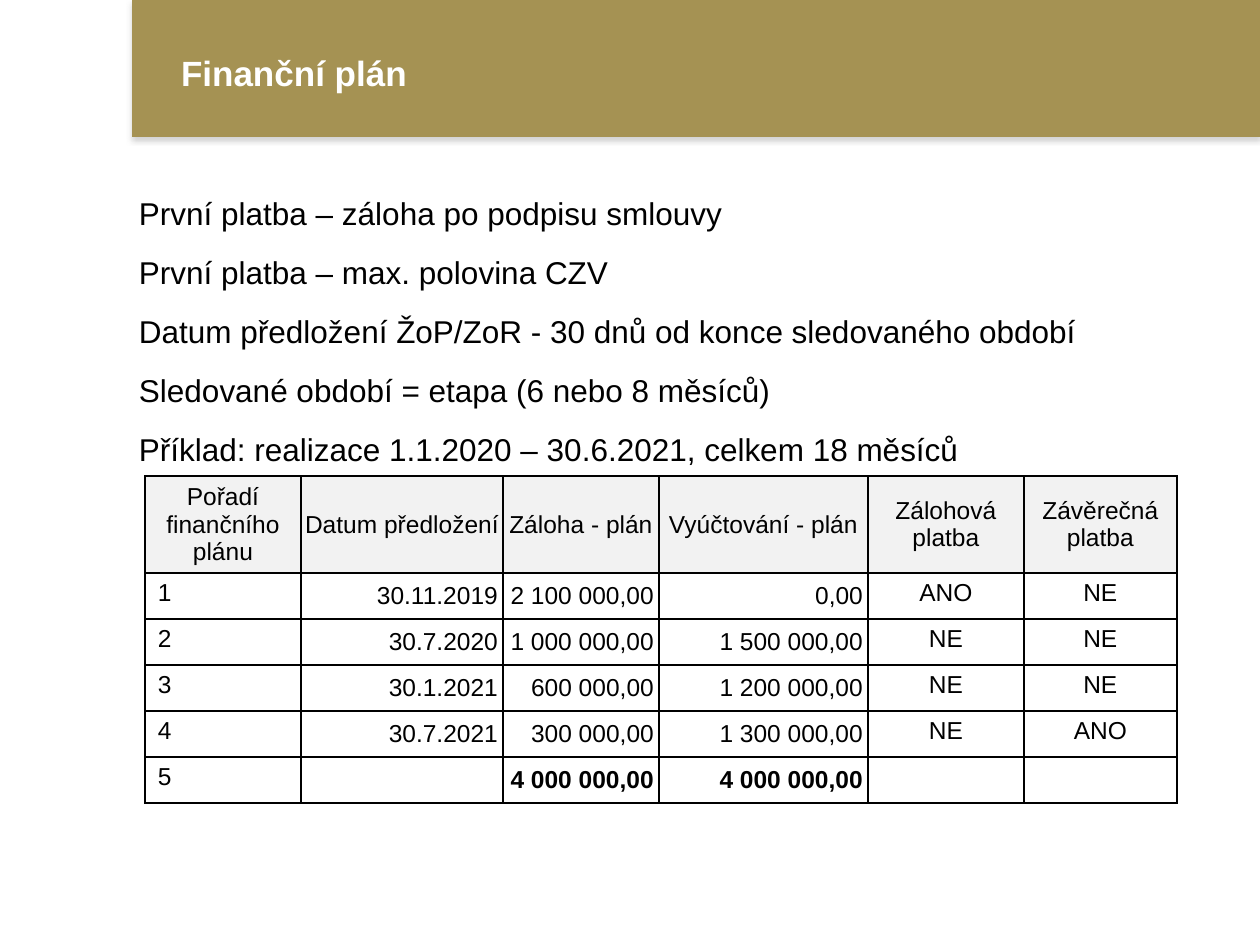
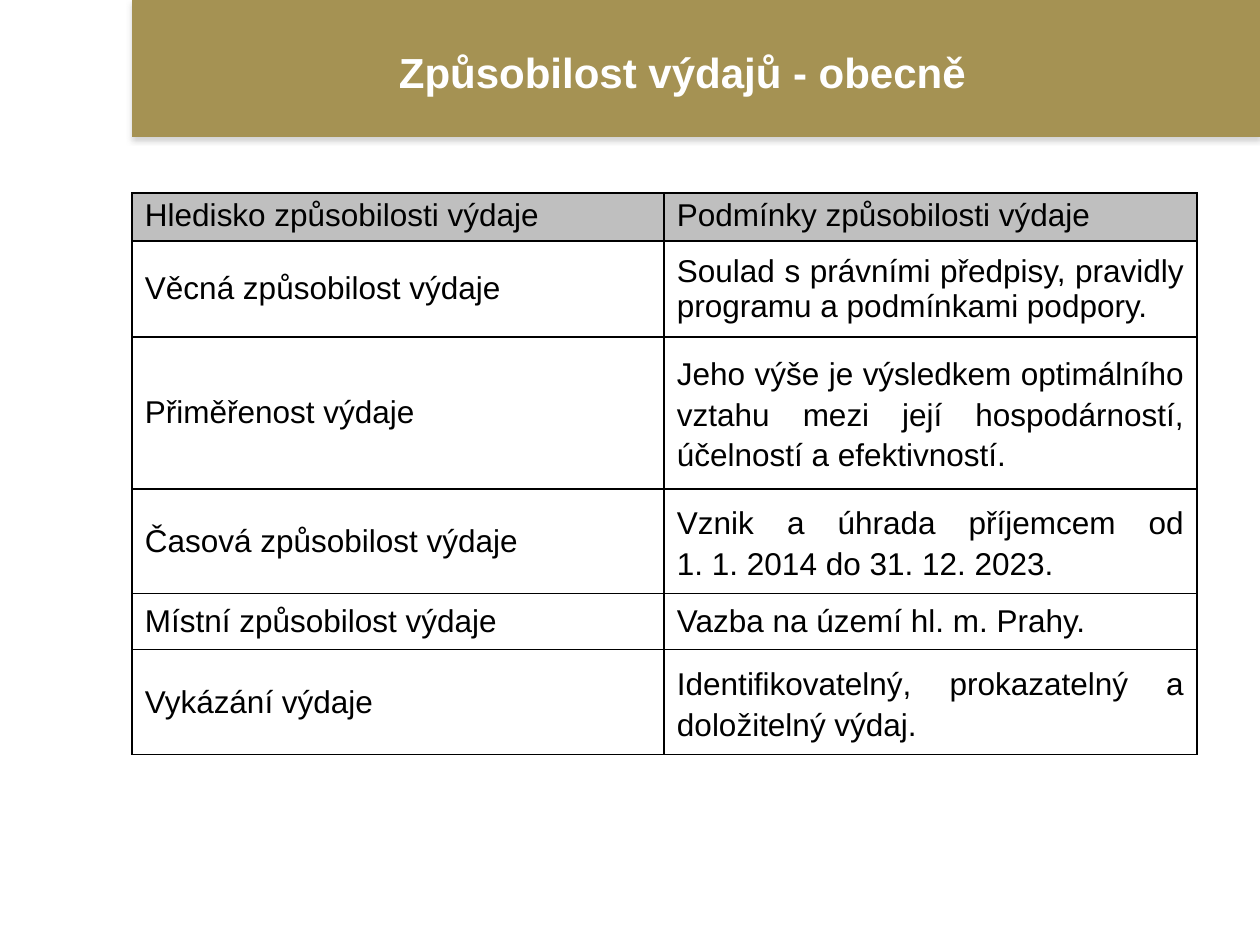
from lxml import etree
from pptx import Presentation
from pptx.dml.color import RGBColor
from pptx.enum.shapes import MSO_SHAPE
from pptx.enum.text import MSO_ANCHOR, PP_ALIGN
from pptx.oxml import parse_xml
from pptx.oxml.ns import nsdecls, qn
from pptx.util import Pt

RECTANGLE = MSO_SHAPE.RECTANGLE
TOP, MIDDLE = MSO_ANCHOR.TOP, MSO_ANCHOR.MIDDLE
LEFT, CENTER = PP_ALIGN.LEFT, PP_ALIGN.CENTER
RIGHT, JUSTIFY = PP_ALIGN.RIGHT, PP_ALIGN.JUSTIFY

EMU_PER_PX = 914400 / 126
FONT = "Arial"
COLORS = {
    "band": "A59253",
    "title": "FFFFFF",
    "text": "000000",
    "border": "000000",
    "shadow": "808080",
    "plan_header": "F2F2F2",
    "rules_header": "BFBFBF",
}

DEFAULT_MARGINS = (13, 6, 13, 6)
NO_MARGINS = (0, 0, 0, 0)
AMOUNT_MARGINS = (1, 1, 5, 0)

PAYMENT_NOTES = [
    "První platba – záloha po podpisu smlouvy",
    "První platba – max. polovina CZV",
    "Datum předložení ŽoP/ZoR - 30 dnů od konce sledovaného období",
    "Sledované období = etapa (6 nebo 8 měsíců)",
    "Příklad: realizace 1.1.2020 – 30.6.2021, celkem 18 měsíců",
]
PLAN_ROWS = [
    ["Pořadí finančního plánu", "Datum předložení", "Záloha - plán",
     "Vyúčtování - plán", "Zálohová platba", "Závěrečná platba"],
    ["1", "30.11.2019", "2 100 000,00", "0,00", "ANO", "NE"],
    ["2", "30.7.2020", "1 000 000,00", "1 500 000,00", "NE", "NE"],
    ["3", "30.1.2021", "600 000,00", "1 200 000,00", "NE", "NE"],
    ["4", "30.7.2021", "300 000,00", "1 300 000,00", "NE", "ANO"],
    ["5", "", "4 000 000,00", "4 000 000,00", "", ""],
]
RULES_ROWS = [
    ["Hledisko způsobilosti výdaje", "Podmínky způsobilosti výdaje"],
    ["Věcná způsobilost výdaje",
     "Soulad s právními předpisy, pravidly programu a podmínkami podpory."],
    ["Přiměřenost výdaje",
     "Jeho výše je výsledkem optimálního vztahu mezi její hospodárností, "
     "účelností a efektivností."],
    ["Časová způsobilost výdaje",
     "Vznik a úhrada příjemcem od\v1. 1. 2014 do 31. 12. 2023."],
    ["Místní způsobilost výdaje", "Vazba na území hl. m. Prahy."],
    ["Vykázání výdaje", "Identifikovatelný, prokazatelný a doložitelný výdaj."],
]
WIDE_SPACED_RULES = (2, 3, 5)
LOCAL_RULE = 4


def px(length):
    return round(length * EMU_PER_PX)


def write(text_frame, text, size=18, color="text", bold=False, align=LEFT,
          line_spacing=None, space_before=0, indent=0):
    lines = [text] if isinstance(text, str) else text
    for index, line in enumerate(lines):
        paragraph = text_frame.add_paragraph() if index else text_frame.paragraphs[0]
        paragraph.text = line
        paragraph.alignment = align
        if line_spacing:
            paragraph.line_spacing = line_spacing
        if index:
            paragraph.space_before = Pt(space_before)
        if indent:
            paragraph._p.get_or_add_pPr().set("marL", str(px(indent)))
        for run in paragraph.runs:
            run.font.name = FONT
            run.font.size = Pt(size)
            run.font.bold = bold
            run.font.color.rgb = RGBColor.from_string(COLORS[color])


def add_text(slide, box, text, anchor=TOP, margins=DEFAULT_MARGINS, **text_format):
    shape = slide.shapes.add_textbox(*map(px, box))
    text_frame = shape.text_frame
    text_frame.word_wrap = True
    text_frame.vertical_anchor = anchor
    set_margins(text_frame, margins)
    write(text_frame, text, **text_format)


def set_margins(target, margins):
    (target.margin_left, target.margin_top,
     target.margin_right, target.margin_bottom) = map(px, margins)


def add_shadow(shape):
    shape.shadow.inherit = False
    effects = shape._element.spPr.find(qn("a:effectLst"))
    effects.append(parse_xml(
        f'<a:outerShdw {nsdecls("a")} blurRad="{Pt(3.1)}" dist="{Pt(1.8)}" '
        'dir="5400000" rotWithShape="0">'
        f'<a:srgbClr val="{COLORS["shadow"]}"><a:alpha val="35000"/></a:srgbClr>'
        '</a:outerShdw>'))


def add_titled_slide(presentation, title, size, align):
    slide = presentation.slides.add_slide(presentation.slide_layouts[6])
    band = slide.shapes.add_shape(RECTANGLE, px(132), 0, px(1128), px(137))
    band.fill.solid()
    band.fill.fore_color.rgb = RGBColor.from_string(COLORS["band"])
    band.line.fill.background()
    add_shadow(band)
    add_text(slide, (168, 50, 1029, 44), title, anchor=MIDDLE,
             size=size, color="title", bold=True, align=align)
    return slide


def add_borders(cell):
    properties = cell._tc.get_or_add_tcPr()
    for side in ("lnL", "lnR", "lnT", "lnB"):
        line = etree.SubElement(properties, qn(f"a:{side}"), w=str(Pt(1)))
        fill = etree.SubElement(line, qn("a:solidFill"))
        etree.SubElement(fill, qn("a:srgbClr"), val=COLORS["border"])


def format_cell(cell, text, fill=None, anchor=TOP, margins=DEFAULT_MARGINS, **text_format):
    add_borders(cell)
    if fill:
        cell.fill.solid()
        cell.fill.fore_color.rgb = RGBColor.from_string(COLORS[fill])
    else:
        cell.fill.background()
    cell.vertical_anchor = anchor
    set_margins(cell, margins)
    write(cell.text_frame, text, **text_format)


def add_grid(slide, left, top, widths, heights, rows, cell_format):
    frame = slide.shapes.add_table(len(heights), len(widths), px(left), px(top),
                                   px(sum(widths)), px(sum(heights)))
    table = frame.table
    table.first_row = False
    table.horz_banding = False
    for column, width in zip(table.columns, widths):
        column.width = px(width)
    for row, height in zip(table.rows, heights):
        row.height = px(height)
    for row_index, texts in enumerate(rows):
        for column_index, text in enumerate(texts):
            format_cell(table.cell(row_index, column_index), text,
                        **cell_format(row_index, column_index))


def plan_cell_format(row, column):
    if row == 0:
        return dict(size=14, fill="plan_header", anchor=MIDDLE,
                    margins=NO_MARGINS, align=CENTER)
    total_row = row == len(PLAN_ROWS) - 1
    if column in (1, 2, 3) or (total_row and column):
        return dict(size=14, anchor=MIDDLE, margins=AMOUNT_MARGINS,
                    align=RIGHT, bold=total_row)
    return dict(size=14, align=CENTER if column else LEFT)


def rules_cell_format(row, column):
    if row == 0:
        return dict(fill="rules_header", margins=(13, 5, 13, 5))
    if column == 0 or row == LOCAL_RULE:
        return dict(anchor=MIDDLE)
    spacing = 1.15 if row in WIDE_SPACED_RULES else None
    return dict(anchor=MIDDLE, align=JUSTIFY, line_spacing=spacing)


def main():
    presentation = Presentation()
    presentation.slide_width = px(1260)
    presentation.slide_height = px(945)

    plan_slide = add_titled_slide(presentation, "Finanční plán", 20, LEFT)
    add_text(plan_slide, (63, 166, 1114, 490), PAYMENT_NOTES, margins=(13, 9, 13, 6),
             line_spacing=1.5, space_before=1.4, indent=63)
    add_grid(plan_slide, 145, 476, [156, 202, 156, 209, 156, 153],
             [97] + [46] * 5, PLAN_ROWS, plan_cell_format)

    rules_slide = add_titled_slide(presentation, "Způsobilost výdajů - obecně", 24, CENTER)
    add_grid(rules_slide, 132, 193, [532, 533],
             [47, 96, 152, 105, 56, 105], RULES_ROWS, rules_cell_format)

    presentation.save("out.pptx")


if __name__ == "__main__":
    main()
